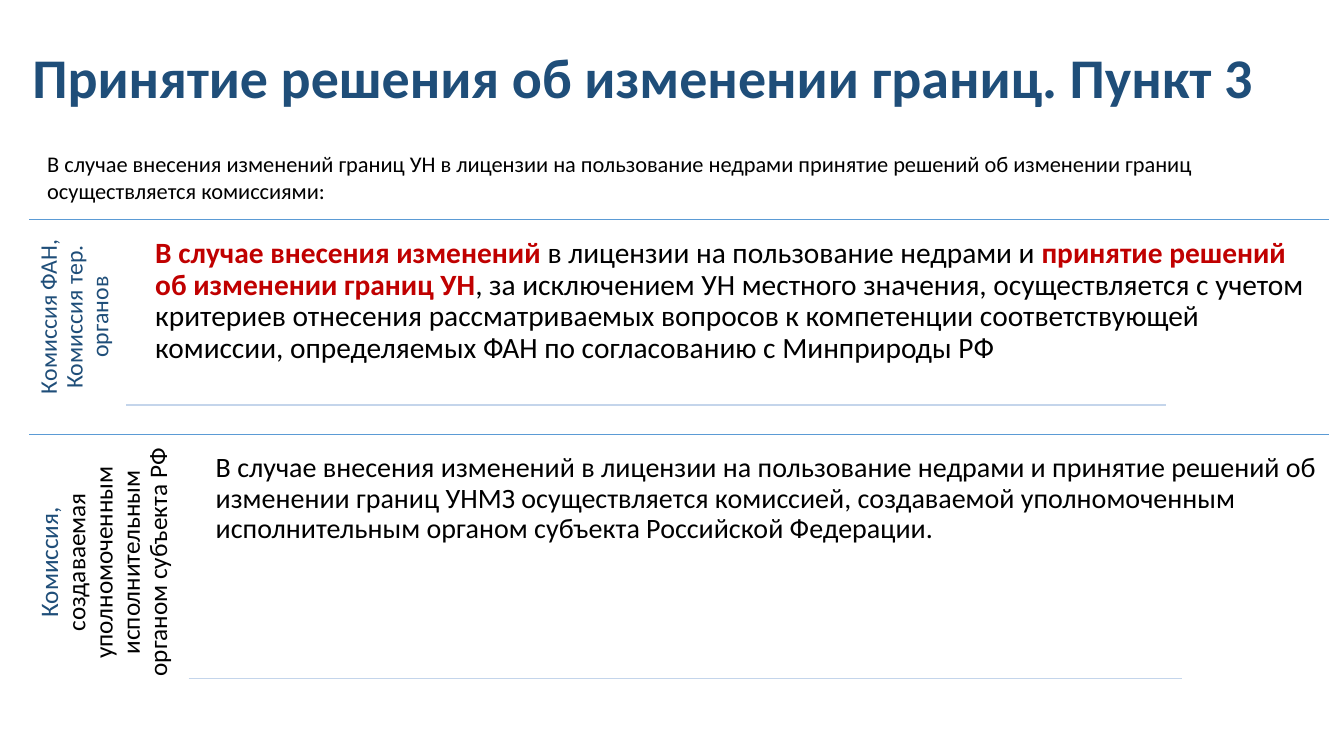
from dataclasses import dataclass

from lxml import etree
from pptx import Presentation
from pptx import util as u
from pptx.dml.color import RGBColor
from pptx.enum import shapes, text
from pptx.oxml.ns import qn


@dataclass(frozen=True)
class Theme:
    font: str = "Calibri"
    navy: str = "1F4E79"
    red: str = "C00000"
    black: str = "000000"
    rule: str = "5B9BD5"
    pale_rule: str = "C4D5EB"
    title_size: int = 40
    intro_size: int = 16
    line_width: int = 1
    tight: float = 0.9


class Slide:
    def __init__(self, deck, theme):
        self.theme = theme
        self.page = deck.slides.add_slide(deck.slide_layouts[5])

    def fill_text(self, frame, spans, size, spacing=1.0, align=text.PP_ALIGN.LEFT):
        para = frame.paragraphs[0]
        para.alignment = align
        para.line_spacing = spacing
        para.font.name = self.theme.font
        para.font.size = u.Pt(size)
        for wording, color, bold in spans:
            span = para.add_run()
            span.text = wording
            span.font.color.rgb = RGBColor.from_string(color)
            span.font.bold = bold

    def title(self, wording, bounds):
        box = self.page.shapes.title
        box.left, box.top, box.width, box.height = map(u.Inches, bounds)
        frame = box.text_frame
        frame.auto_size = text.MSO_AUTO_SIZE.NONE
        frame.vertical_anchor = text.MSO_ANCHOR.MIDDLE
        self.fill_text(frame, [(wording, self.theme.navy, True)],
                       self.theme.title_size, self.theme.tight)

    def text_box(self, parent, bounds, inset=None):
        box = parent.shapes.add_textbox(*map(u.Inches, bounds))
        frame = box.text_frame
        frame.word_wrap = True
        if inset is not None:
            frame.margin_left = frame.margin_right = u.Inches(inset)
            frame.margin_top = frame.margin_bottom = u.Inches(inset)
        return box

    def intro(self, wording, bounds):
        box = self.text_box(self.page, bounds)
        self.fill_text(box.text_frame, [(wording, self.theme.black, False)],
                       self.theme.intro_size)

    def rule(self, parent, left, right, top, color):
        line = parent.shapes.add_connector(
            shapes.MSO_CONNECTOR.STRAIGHT,
            u.Inches(left), u.Inches(top), u.Inches(right), u.Inches(top))
        line.line.color.rgb = RGBColor.from_string(color)
        line.line.width = u.Pt(self.theme.line_width)
        etree.SubElement(line.element.spPr, qn("a:effectLst"))

    def label(self, parent, bounds, spans, size):
        box = self.text_box(parent, bounds, 0.07)
        box.element.txBody.bodyPr.set("vert", "vert270")
        self.fill_text(box.text_frame, spans, size, self.theme.tight,
                       text.PP_ALIGN.CENTER)

    def body(self, parent, bounds, inset, spans, size):
        box = self.text_box(parent, bounds, inset)
        self.fill_text(box.text_frame, spans, size, self.theme.tight)

    def commission(self, label_bounds, label_spans, label_size,
                   body_bounds, inset, body_spans, body_size, end):
        group = self.page.shapes.add_group_shape()
        left, top, width, _ = label_bounds
        bottom = body_bounds[1] + body_bounds[3]
        self.rule(group, left, 13.18, top, self.theme.rule)
        self.label(group, label_bounds, label_spans, label_size)
        self.body(group, body_bounds, inset, body_spans, body_size)
        self.rule(group, left + width, end, bottom, self.theme.pale_rule)


def main():
    deck = Presentation()
    deck.slide_width = u.Inches(13.33)
    deck.slide_height = u.Inches(7.5)
    theme = Theme()
    slide = Slide(deck, theme)

    slide.title("Принятие решения об изменении границ. Пункт 3",
                (0.22, 0.07, 12.64, 1.45))
    slide.intro("В случае внесения изменений границ УН в лицензии на пользование "
                "недрами принятие решений об изменении границ осуществляется "
                "комиссиями:", (0.37, 1.44, 12.81, 0.64))

    slide.commission(
        (0.29, 2.18, 0.96, 1.93),
        [("Комиссия ФАН, Комиссия тер. органов", theme.navy, False)], 17,
        (1.45, 2.27, 11.63, 1.75), 0.09,
        [("В случае внесения изменений ", theme.red, True),
         ("в лицензии на пользование недрами и ", theme.black, False),
         ("принятие решений об изменении границ УН", theme.red, True),
         (", за исключением УН местного значения, осуществляется с учетом "
          "критериев отнесения рассматриваемых вопросов к компетенции "
          "соответствующей комиссии, определяемых ФАН по согласованию "
          "с Минприроды РФ", theme.black, False)], 21, 11.56)

    slide.commission(
        (0.29, 4.31, 1.58, 2.54),
        [("Комиссия, ", theme.navy, False),
         ("создаваемая уполномоченным исполнительным органом субъекта РФ",
          theme.black, False)], 18,
        (2.06, 4.42, 11.1, 2.31), 0.08,
        [("В случае внесения изменений в лицензии на пользование недрами "
          "и принятие решений об изменении границ УНМЗ осуществляется "
          "комиссией, создаваемой уполномоченным исполнительным органом "
          "субъекта Российской Федерации.", theme.black, False)], 20, 11.72)

    deck.save("out.pptx")


if __name__ == "__main__":
    main()
